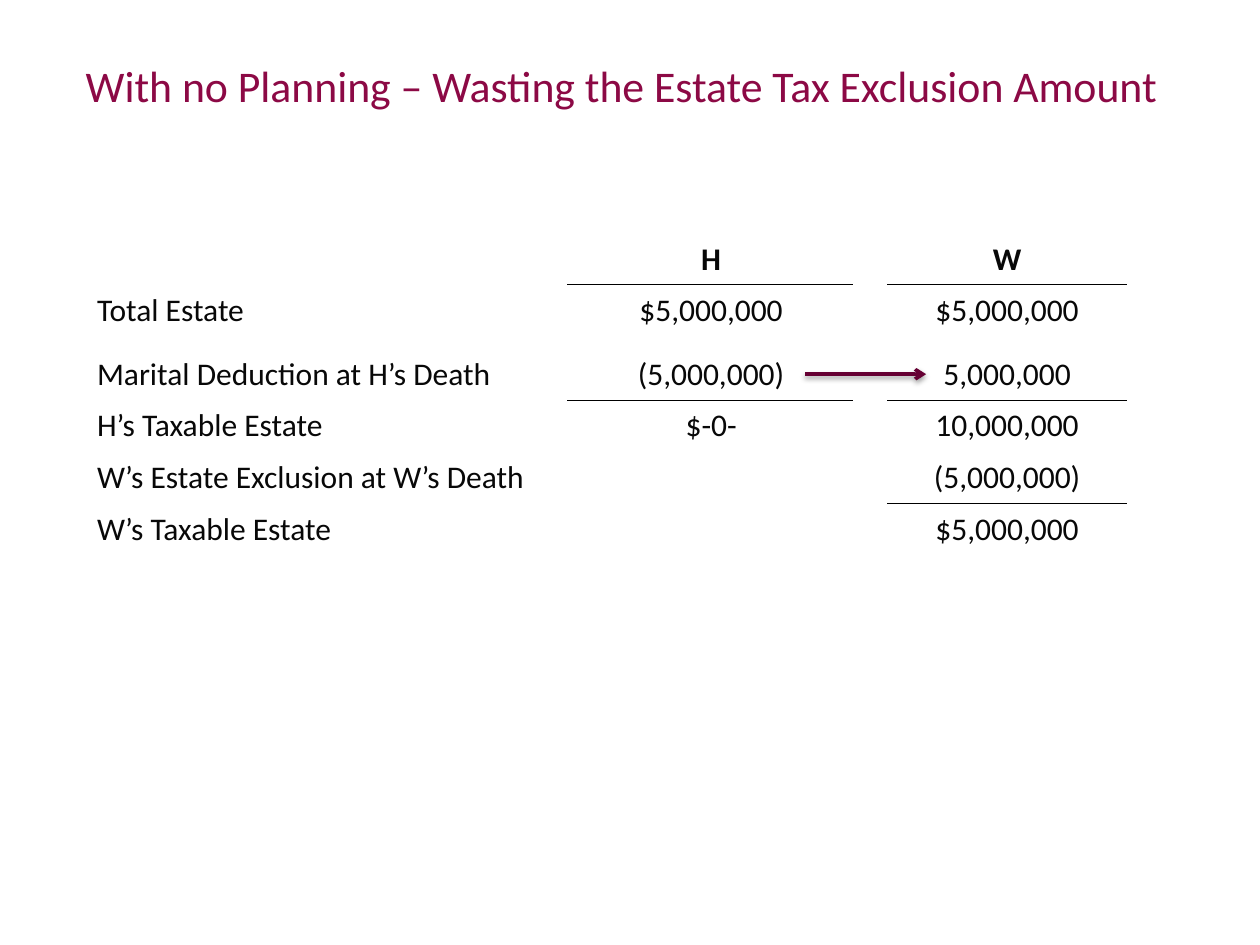
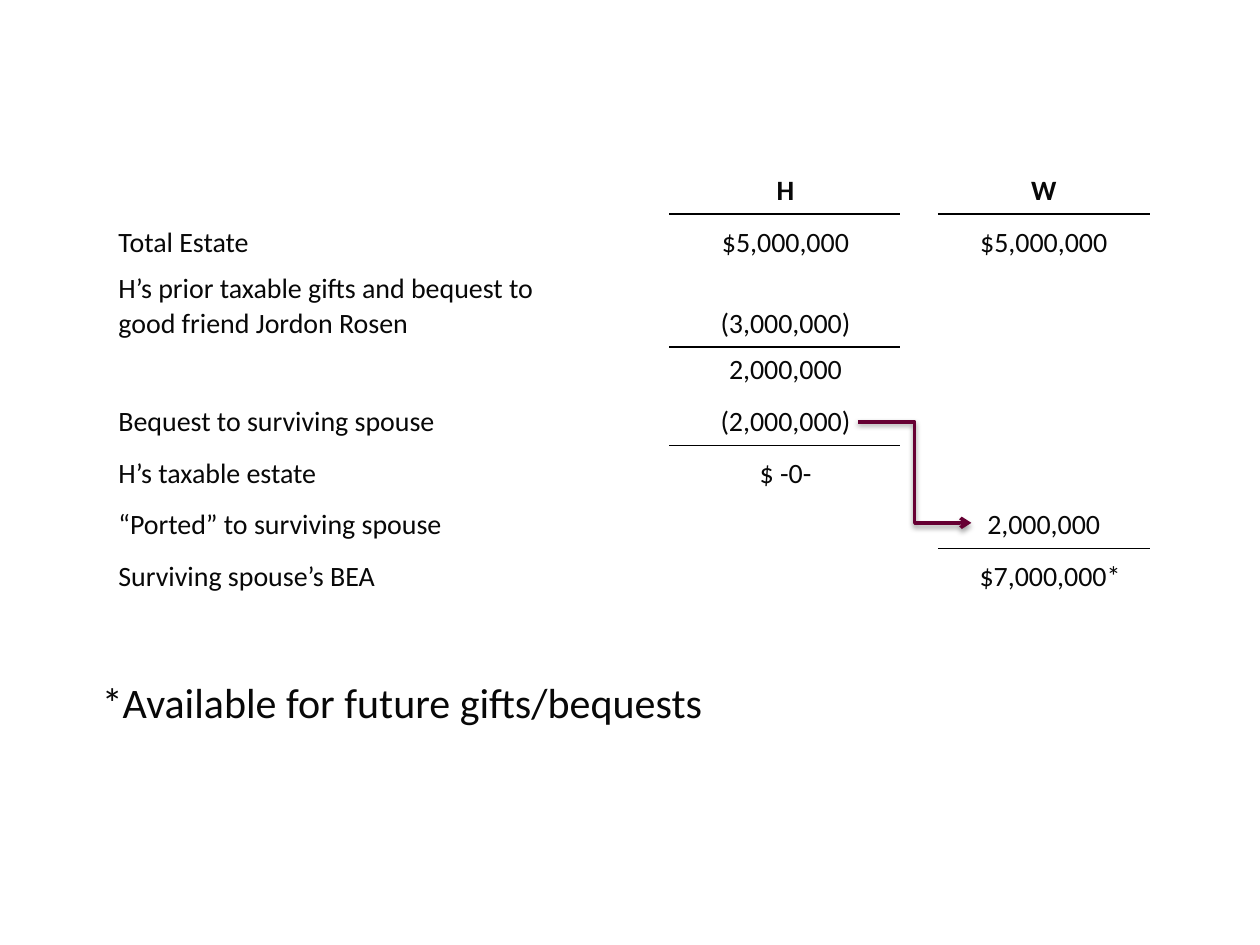
from dataclasses import dataclass

from lxml.etree import SubElement
from pptx import Presentation
from pptx.dml.color import RGBColor as Color
from pptx.enum.shapes import MSO_CONNECTOR as Link
from pptx.enum.text import MSO_ANCHOR as Anchor, PP_ALIGN as Align
from pptx.oxml.ns import qn
from pptx.util import Inches, Pt


@dataclass(frozen=True)
class Theme:
    font: str = "Calibri"
    paper: str = "FFFFFF"
    ink: str = "080808"
    rule: str = "000000"
    title: str = "8C0945"
    arrow: str = "660033"
    title_size: int = 25
    note_size: int = 24
    rule_width: int = 1
    header_width: int = 3
    arrow_width: int = 2


THEME = Theme()
COLUMNS = {"label": 0, "H": 2, "W": 4}

WASTED = {
    "title": "With no Planning – Wasting the Estate Tax Exclusion Amount",
    "title_at": (0.58, 0.42, 8.92, 0.92),
    "origin": (0.67, 1.85),
    "size": 18,
    "columns": (3.6, 0.23, 2.27, 0.27, 1.89),
    "heights": (0.41, 0.41, 0.51, 0.36, 0.41, 0.41),
    "rows": [
        ("", "H", "W"),
        ("Total Estate", "$5,000,000", "$5,000,000"),
        ("Marital Deduction at H’s Death", "(5,000,000)", "5,000,000"),
        ("H’s Taxable Estate", "$-0-", "10,000,000"),
        ("W’s Estate Exclusion at W’s Death", "", "(5,000,000)"),
        ("W’s Taxable Estate", "", "$5,000,000"),
    ],
    "ruled_below": {"H": (0, 2), "W": (0, 2, 4)},
    "arrow": (Link.STRAIGHT, (6.39, 2.97), (7.35, 2.97)),
}

PORTED = {
    "origin": (0.84, 1.29),
    "size": 16,
    "columns": (4.24, 0.23, 1.83, 0.3, 1.67),
    "heights": (0.41, 0.41, 0.51, 0.36, 0.41, 0.41, 0.41, 0.41),
    "rows": [
        ("", "H", "W"),
        ("Total Estate", "$5,000,000", "$5,000,000"),
        ("H’s prior taxable gifts and bequest to\ngood friend Jordon Rosen", "(3,000,000)", ""),
        ("", "2,000,000", ""),
        ("Bequest to surviving spouse", "(2,000,000)", ""),
        ("H’s taxable estate", "$ -0-", ""),
        ("“Ported” to surviving spouse", "", "2,000,000"),
        ("Surviving spouse’s BEA", "", "$7,000,000*"),
    ],
    "ruled_below": {"H": (0, 2, 4), "W": (0, 6)},
    "arrow": (Link.ELBOW, (6.81, 3.35), (7.71, 4.15)),
    "note": "*Available for future gifts/bequests",
    "note_at": (0.71, 5.32, 8.51, 0.5),
}


def add_text(para, text, size, color, bold=False):
    """Write text into a paragraph, one run per line."""
    for number, line in enumerate(text.split("\n")):
        if number:
            para.add_line_break()
        span = para.add_run()
        span.text = line
        span.font.name = THEME.font
        span.font.size = Pt(size)
        span.font.bold = bold
        span.font.color.rgb = Color.from_string(color)


def place(shape, at):
    """Set the position and size of a shape in inches."""
    shape.left, shape.top, shape.width, shape.height = map(Inches, at)


def add_title(page, text, at):
    """Fill the title placeholder."""
    box = page.shapes.title
    place(box, at)
    frame = box.text_frame
    frame.word_wrap = True
    frame.vertical_anchor = Anchor.TOP
    para = frame.paragraphs[0]
    para.alignment = Align.LEFT
    add_text(para, text, THEME.title_size, THEME.title)


def add_note(page, text, at):
    """Add the note under the table."""
    frame = page.shapes.add_textbox(*map(Inches, at)).text_frame
    frame.word_wrap = True
    add_text(frame.paragraphs[0], text, THEME.note_size, THEME.ink)


def add_border(cell, side, color, width):
    """Draw one border of a cell."""
    line = SubElement(cell._tc.get_or_add_tcPr(), qn(f"a:ln{side}"), w=str(Pt(width)))
    SubElement(SubElement(line, qn("a:solidFill")), qn("a:srgbClr"), val=color)


def edge_style(below_row, ruled):
    """Choose the colour and width of the edge below a row."""
    if below_row in ruled:
        return THEME.rule, THEME.rule_width
    return THEME.paper, THEME.header_width if below_row == 0 else THEME.rule_width


def format_cell(cell, row, ruled):
    """Give a cell its borders, fill and anchor."""
    for side in "LR":
        add_border(cell, side, THEME.paper, THEME.rule_width)
    add_border(cell, "T", *edge_style(row - 1, ruled))
    add_border(cell, "B", *edge_style(row, ruled))
    cell.fill.solid()
    cell.fill.fore_color.rgb = Color.from_string(THEME.paper)
    cell.vertical_anchor = Anchor.BOTTOM


def fill_cell(cell, text, size, header, numeric):
    """Write a cell, or keep an empty one at the table's type size."""
    para = cell.text_frame.paragraphs[0]
    if not text:
        SubElement(para._p, qn("a:endParaRPr"), sz=str(size * 100))
        return
    para.alignment = Align.CENTER if numeric else Align.LEFT
    if text.endswith("*"):
        cell.margin_left = Inches(0.2)
    add_text(para, text, size, THEME.ink, header)


def add_estate_table(page, content):
    """Build the table of estates for both spouses."""
    columns, heights = content["columns"], content["heights"]
    extent = (*content["origin"], sum(columns), sum(heights))
    table = page.shapes.add_table(len(heights), len(columns), *map(Inches, extent)).table
    table.first_row = table.horz_banding = False
    for column, width in zip(table.columns, columns):
        column.width = Inches(width)
    names = {index: name for name, index in COLUMNS.items()}
    for row, (height, values) in enumerate(zip(heights, content["rows"])):
        table.rows[row].height = Inches(height)
        texts = dict(zip(COLUMNS.values(), values))
        for index in range(len(columns)):
            cell = table.cell(row, index)
            format_cell(cell, row, content["ruled_below"].get(names.get(index), ()))
            fill_cell(cell, texts.get(index, ""), content["size"], row == 0, index > 0)


def add_arrow(page, kind, start, end):
    """Draw the shadowed arrow from one spouse's amount to the other's."""
    arrow = page.shapes.add_connector(kind, *map(Inches, (*start, *end)))
    arrow.line.color.rgb = Color.from_string(THEME.arrow)
    arrow.line.width = Pt(THEME.arrow_width)
    SubElement(arrow.line._get_or_add_ln(), qn("a:tailEnd"), type="arrow")
    effects = SubElement(arrow._element.spPr, qn("a:effectLst"))
    shadow = SubElement(effects, qn("a:outerShdw"), blurRad=str(Pt(3.1)),
                        dist=str(Pt(1.6)), dir="5400000", rotWithShape="0")
    tint = SubElement(shadow, qn("a:srgbClr"), val=THEME.rule)
    SubElement(tint, qn("a:alpha"), val="38000")


def add_page(deck, content):
    """Add one slide with its table, arrow and optional texts."""
    layout = "Title Only" if "title" in content else "Blank"
    page = deck.slides.add_slide(deck.slide_layouts.get_by_name(layout))
    if "title" in content:
        add_title(page, content["title"], content["title_at"])
    add_estate_table(page, content)
    add_arrow(page, *content["arrow"])
    if "note" in content:
        add_note(page, content["note"], content["note_at"])


def main():
    """Build and save the deck."""
    deck = Presentation()
    deck.slide_width, deck.slide_height = Inches(10), Inches(7.5)
    for content in (WASTED, PORTED):
        add_page(deck, content)
    deck.save("out.pptx")


if __name__ == "__main__":
    main()
